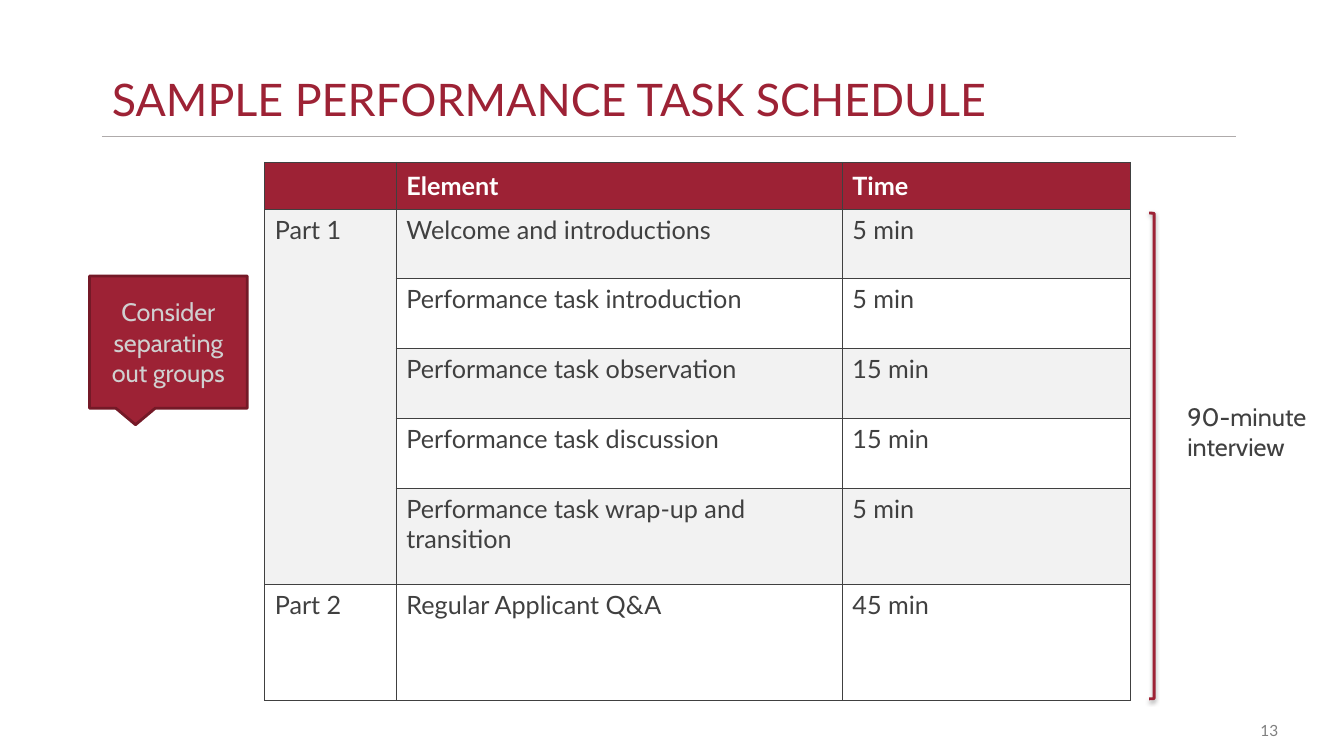
from lxml import etree
from pptx import Presentation
from pptx.dml.color import RGBColor
from pptx.enum.shapes import MSO_CONNECTOR, MSO_SHAPE
from pptx.enum.text import MSO_ANCHOR, MSO_AUTO_SIZE, PP_ALIGN
from pptx.oxml import parse_xml
from pptx.oxml.ns import qn
from pptx.util import Pt

LEFT, CENTER, RIGHT = PP_ALIGN.LEFT, PP_ALIGN.CENTER, PP_ALIGN.RIGHT
TOP, MIDDLE, BOTTOM = MSO_ANCHOR.TOP, MSO_ANCHOR.MIDDLE, MSO_ANCHOR.BOTTOM
RED = RGBColor(0x9D, 0x22, 0x35)
DARK = RGBColor(0x74, 0x19, 0x27)
INK = RGBColor(0x40, 0x40, 0x40)
GREY = RGBColor(0x80, 0x80, 0x80)
RULE = RGBColor(0xAF, 0xAB, 0xAB)
PALE = RGBColor(0xD0, 0xD0, 0xD0)
BAND = RGBColor(0xF2, 0xF2, 0xF2)
WHITE = RGBColor(0xFF, 0xFF, 0xFF)

TITLE = "SAMPLE PERFORMANCE TASK SCHEDULE"
TIP = "Consider separating out groups"
TOTAL = "90-minute interview"
PAGE = "13"
ROWS = [
    ("", "Element", "Time"),
    ("Part 1", "Welcome and introductions", "5 min"),
    ("", "Performance task introduction", "5 min"),
    ("", "Performance task observation", "15 min"),
    ("", "Performance task discussion", "15 min"),
    ("", "Performance task wrap-up and transition", "5 min"),
    ("Part 2", "Regular Applicant Q&A", "45 min"),
]
WIDTHS = [94, 318.6, 206]
HEIGHTS = [33.6, 49.2, 50, 50, 50, 68.6, 82.9]
PART_END = 5

TITLE_BOX = (72.7, 7.2, 810, 86.4)
TABLE_BOX = (189.1, 116, sum(WIDTHS), sum(HEIGHTS))
TIP_BOX = (64, 197.2, 112.6, 94.4)
BRACKET_BOX = (820.8, 152.2, 3.6, 347)
TOTAL_BOX = (841, 283, 109.4, 51)
PAGE_BOX = (845.3, 511.2, 74.9, 20.9)

SHADOW = """<a:outerShdw
 xmlns:a="http://schemas.openxmlformats.org/drawingml/2006/main"
 blurRad="40000" dist="20000" dir="5400000" rotWithShape="0">
 <a:srgbClr val="000000"><a:alpha val="38000"/></a:srgbClr></a:outerShdw>"""


def points(box):
    return [Pt(n) for n in box]


def write(frame, text, anchor=TOP, align=LEFT, **font):
    frame.word_wrap = True
    frame.vertical_anchor = anchor
    para = frame.paragraphs[0]
    para.alignment = align
    run = para.add_run()
    run.text = text
    style = {"name": "Lato", "size": 18, "color": INK, "bold": False} | font
    run.font.color.rgb = style.pop("color")
    style["size"] = Pt(style["size"])
    for key, value in style.items():
        setattr(run.font, key, value)
    return para


def edge(cell):
    """Draw a thin ink line on all four sides of a cell."""
    props = cell._tc.get_or_add_tcPr()
    for side in ("lnL", "lnR", "lnT", "lnB"):
        line = etree.SubElement(props, qn("a:" + side), w=str(Pt(1)))
        fill = etree.SubElement(line, qn("a:solidFill"))
        etree.SubElement(fill, qn("a:srgbClr"), val=str(INK))


def add_title(slide):
    title = slide.shapes.title
    title.left, title.top, title.width, title.height = points(TITLE_BOX)
    frame = title.text_frame
    frame.auto_size = MSO_AUTO_SIZE.NONE
    para = write(frame, TITLE, BOTTOM, size=32, color=RED)
    para.line_spacing = Pt(34)
    left, top, wide, high = TITLE_BOX
    ends = (left, top + high + 3.6, left + wide, top + high + 3.6)
    rule = slide.shapes.add_connector(MSO_CONNECTOR.STRAIGHT, *points(ends))
    rule.line.color.rgb = RULE
    rule.line.width = Pt(0.75)
    etree.SubElement(rule._element.spPr, qn("a:effectLst"))


def add_schedule(slide):
    frame = slide.shapes.add_table(len(ROWS), len(WIDTHS), *points(TABLE_BOX))
    table = frame.table
    table.first_row = table.horz_banding = False
    for col, wide in zip(table.columns, WIDTHS):
        col.width = Pt(wide)
    for r, (row, high) in enumerate(zip(ROWS, HEIGHTS)):
        table.rows[r].height = Pt(high)
        head = r == 0
        for c, text in enumerate(row):
            cell = table.cell(r, c)
            edge(cell)
            cell.fill.solid()
            cell.fill.fore_color.rgb = RED if head else BAND if r % 2 else WHITE
            cell.vertical_anchor = MIDDLE if head else TOP
            if text:
                write(cell.text_frame, text, cell.vertical_anchor,
                      color=WHITE if head else INK, bold=head)
    table.cell(1, 0).merge(table.cell(PART_END, 0))


def add_shape(slide, kind, box, color):
    shape = slide.shapes.add_shape(kind, *points(box))
    shape.shadow.inherit = False
    shape.line.color.rgb = color
    shape.line.width = Pt(2)
    return shape


def add_text(slide, box, text, **style):
    label = slide.shapes.add_textbox(*points(box))
    write(label.text_frame, text, **style)


def main():
    deck = Presentation()
    deck.slide_width, deck.slide_height = Pt(960), Pt(540)
    slide = deck.slides.add_slide(deck.slide_layouts[5])
    add_title(slide)
    add_schedule(slide)

    tip = add_shape(slide, MSO_SHAPE.RECTANGULAR_CALLOUT, TIP_BOX, DARK)
    tip.fill.solid()
    tip.fill.fore_color.rgb = RED
    write(tip.text_frame, TIP, MIDDLE, CENTER, name="Cabin", color=PALE)

    bracket = add_shape(slide, MSO_SHAPE.RIGHT_BRACKET, BRACKET_BOX, RED)
    bracket.fill.background()
    effects = bracket._element.spPr.find(qn("a:effectLst"))
    effects.append(parse_xml(SHADOW))

    add_text(slide, TOTAL_BOX, TOTAL, name="Cabin")
    add_text(slide, PAGE_BOX, PAGE, align=RIGHT, size=11, color=GREY)
    deck.save("out.pptx")


if __name__ == "__main__":
    main()
